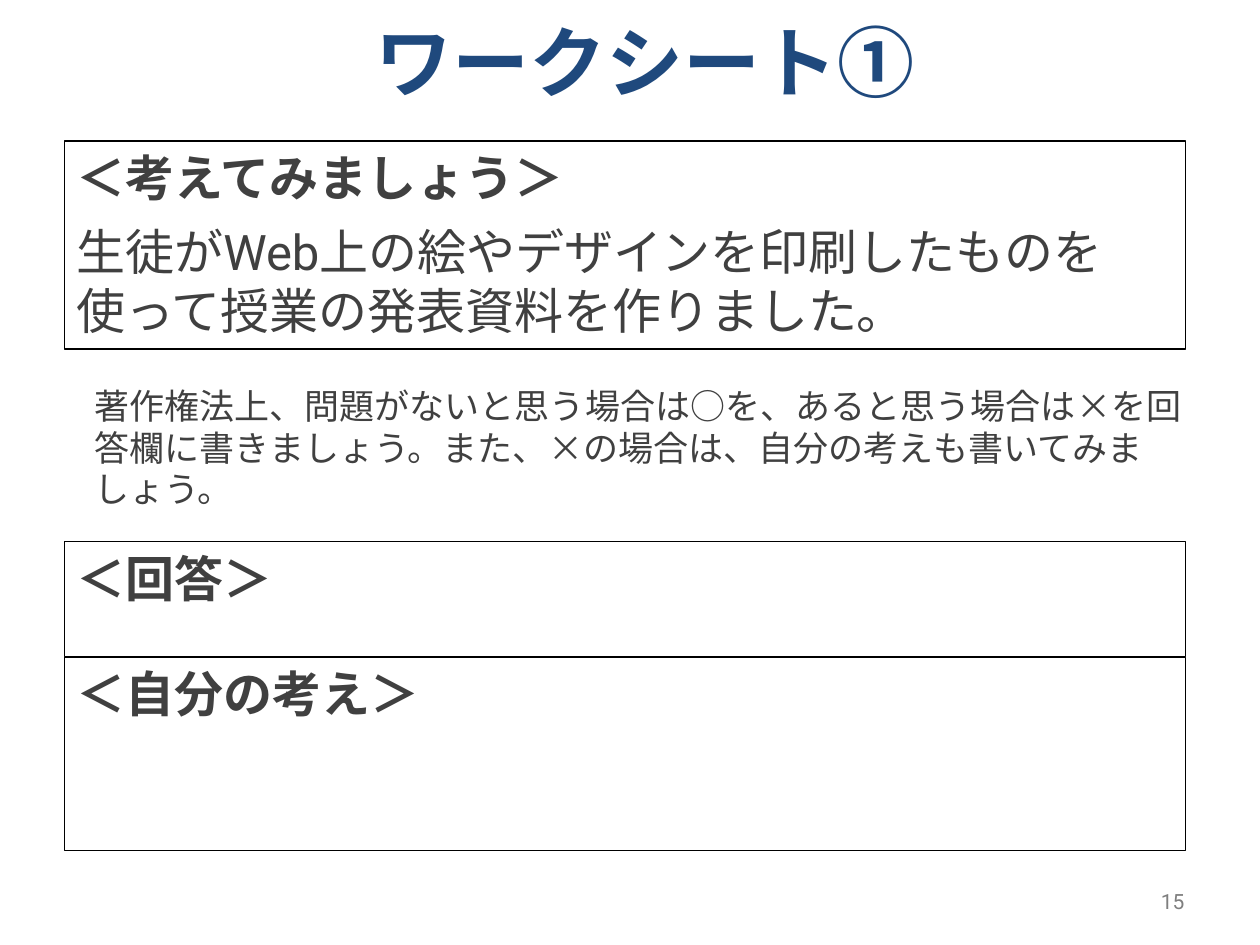
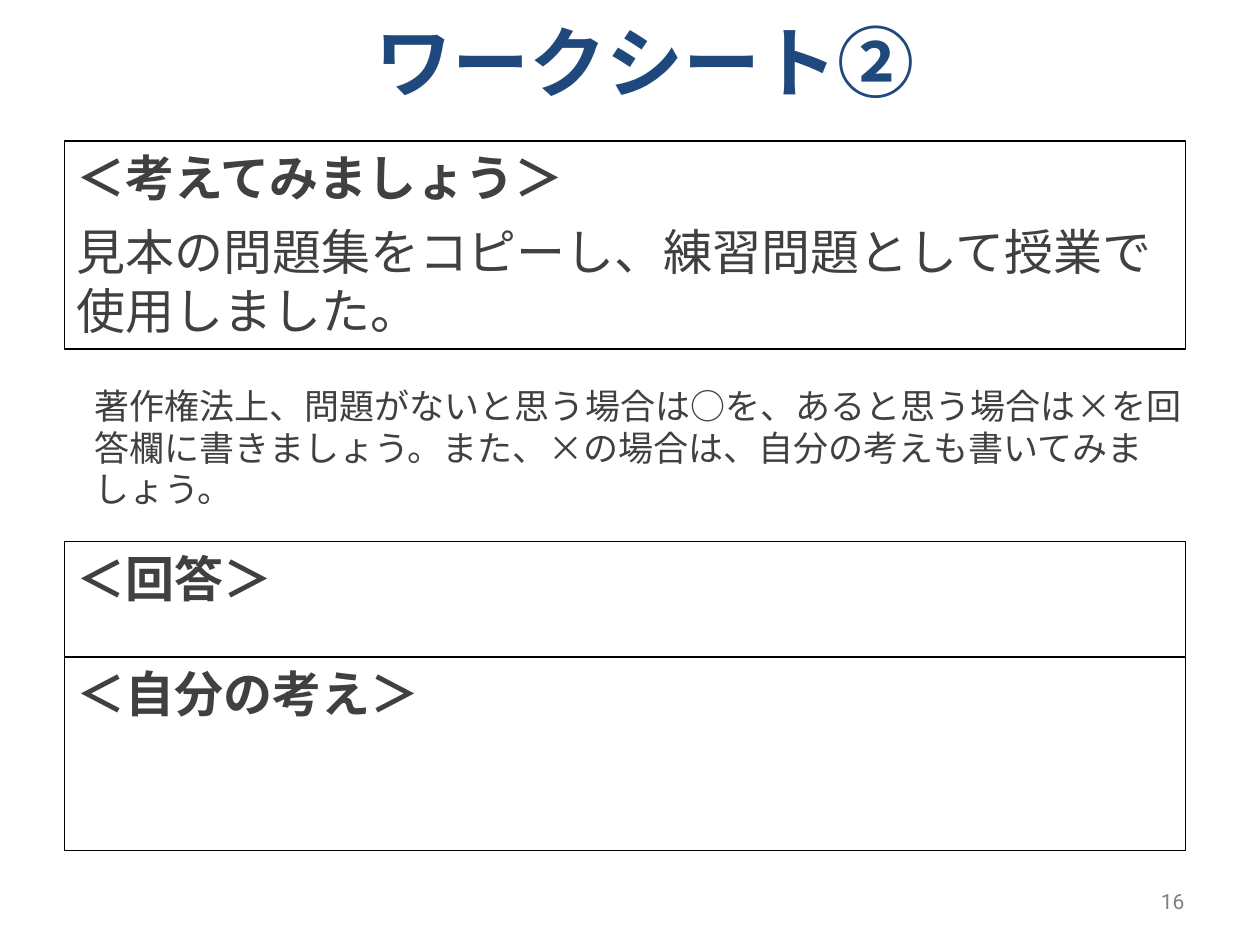
from dataclasses import dataclass

from pptx import Presentation
from pptx import util as u
from pptx.dml import color
from pptx.enum import lang, shapes, text
from pptx.oxml import ns, xmlchemy

COLORS = {"title": "1F497D", "body": "404040", "number": "7F7F7F", "border": "000000"}
INSTRUCTION = (
    "著作権法上、問題がないと思う場合は○を、あると思う場合は×を回答欄に書きましょう。"
    "また、×の場合は、自分の考えも書いてみましょう。"
)
LEFT, WIDTH = 0.51, 8.9
FIRST_PAGE = 15


@dataclass(frozen=True)
class Style:
    font: str
    size: float
    color: str
    bold: bool = False
    align: text.PP_ALIGN = text.PP_ALIGN.LEFT
    before: float = 0
    after: float = 0
    line: float | None = None


TITLE = Style("Arial", 44, "title", True, text.PP_ALIGN.CENTER)
HEADING = Style("Arial", 28, "body", True, before=5.6, after=3)
QUESTION = Style("Roboto", 28, "body", before=5.6, after=3)
GUIDE = Style("Noto Sans CJK JP", 20, "body", before=4, after=3, line=23.6)
NUMBER = Style("Roboto", 12, "number", align=text.PP_ALIGN.RIGHT)


@dataclass(frozen=True)
class Box:
    left: float
    top: float
    width: float
    height: float
    lines: tuple[tuple[str, Style], ...]
    framed: bool = False
    grow: bool = False
    anchor: text.MSO_ANCHOR = text.MSO_ANCHOR.TOP


@dataclass(frozen=True)
class Worksheet:
    mark: str
    question: str


WORKSHEETS = (
    Worksheet("①", "生徒がWeb上の絵やデザインを印刷したものを使って授業の発表資料を作りました。"),
    Worksheet("②", "見本の問題集をコピーし、練習問題として授業で使用しました。"),
)


def set_attributes(target, values: dict) -> None:
    for name, value in values.items():
        setattr(target, name, value)


def write_line(para, wording: str, style: Style) -> None:
    set_attributes(para, {
        "alignment": style.align,
        "space_before": u.Pt(style.before),
        "space_after": u.Pt(style.after),
        "line_spacing": u.Pt(style.line) if style.line else None,
    })
    span = para.add_run()
    span.text = wording
    set_attributes(span.font, {
        "name": style.font,
        "size": u.Pt(style.size),
        "bold": style.bold,
        "language_id": lang.MSO_LANGUAGE_ID.JAPANESE,
    })
    span.font.color.rgb = color.RGBColor.from_string(COLORS[style.color])
    east_asian = xmlchemy.OxmlElement("a:ea")
    east_asian.set("typeface", style.font)
    span.font._element.find(ns.qn("a:latin")).addnext(east_asian)


def draw_box(page, box: Box) -> None:
    place = [u.Inches(n) for n in (box.left, box.top, box.width, box.height)]
    if box.framed:
        shape = page.shapes.add_shape(shapes.MSO_SHAPE.RECTANGLE, *place)
        shape.shadow.inherit = False
        shape.fill.background()
        shape.line.color.rgb = color.RGBColor.from_string(COLORS["border"])
        shape.line.width = u.Pt(0.75)
    else:
        shape = page.shapes.add_textbox(*place)
    frame = shape.text_frame
    set_attributes(frame, {
        "word_wrap": True,
        "vertical_anchor": box.anchor,
        "auto_size": text.MSO_AUTO_SIZE.SHAPE_TO_FIT_TEXT if box.grow else text.MSO_AUTO_SIZE.NONE,
    })
    for index, (wording, style) in enumerate(box.lines):
        para = frame.add_paragraph() if index else frame.paragraphs[0]
        write_line(para, wording, style)


def worksheet_boxes(sheet: Worksheet, number: int) -> tuple[Box, ...]:
    return (
        Box(7.17, 6.95, 2.33, 0.4, ((str(number), NUMBER),), anchor=text.MSO_ANCHOR.MIDDLE),
        Box(LEFT, 0.07, 9.23, 0.83, ((f"ワークシート{sheet.mark}", TITLE),), grow=True),
        Box(LEFT, 1.12, WIDTH, 1.65,
            (("＜考えてみましょう＞", HEADING), (sheet.question, QUESTION)), framed=True, grow=True),
        Box(0.65, 3.01, WIDTH, 1.11, ((INSTRUCTION, GUIDE),), grow=True),
        Box(LEFT, 4.3, WIDTH, 0.91, (("＜回答＞", HEADING),), framed=True),
        Box(LEFT, 5.22, WIDTH, 1.53, (("＜自分の考え＞", HEADING),), framed=True),
    )


def main() -> None:
    deck = Presentation()
    set_attributes(deck, {"slide_width": u.Inches(10), "slide_height": u.Inches(7.5)})
    for number, sheet in enumerate(WORKSHEETS, FIRST_PAGE):
        page = deck.slides.add_slide(deck.slide_layouts[6])
        for box in worksheet_boxes(sheet, number):
            draw_box(page, box)
    deck.save("out.pptx")


if __name__ == "__main__":
    main()
